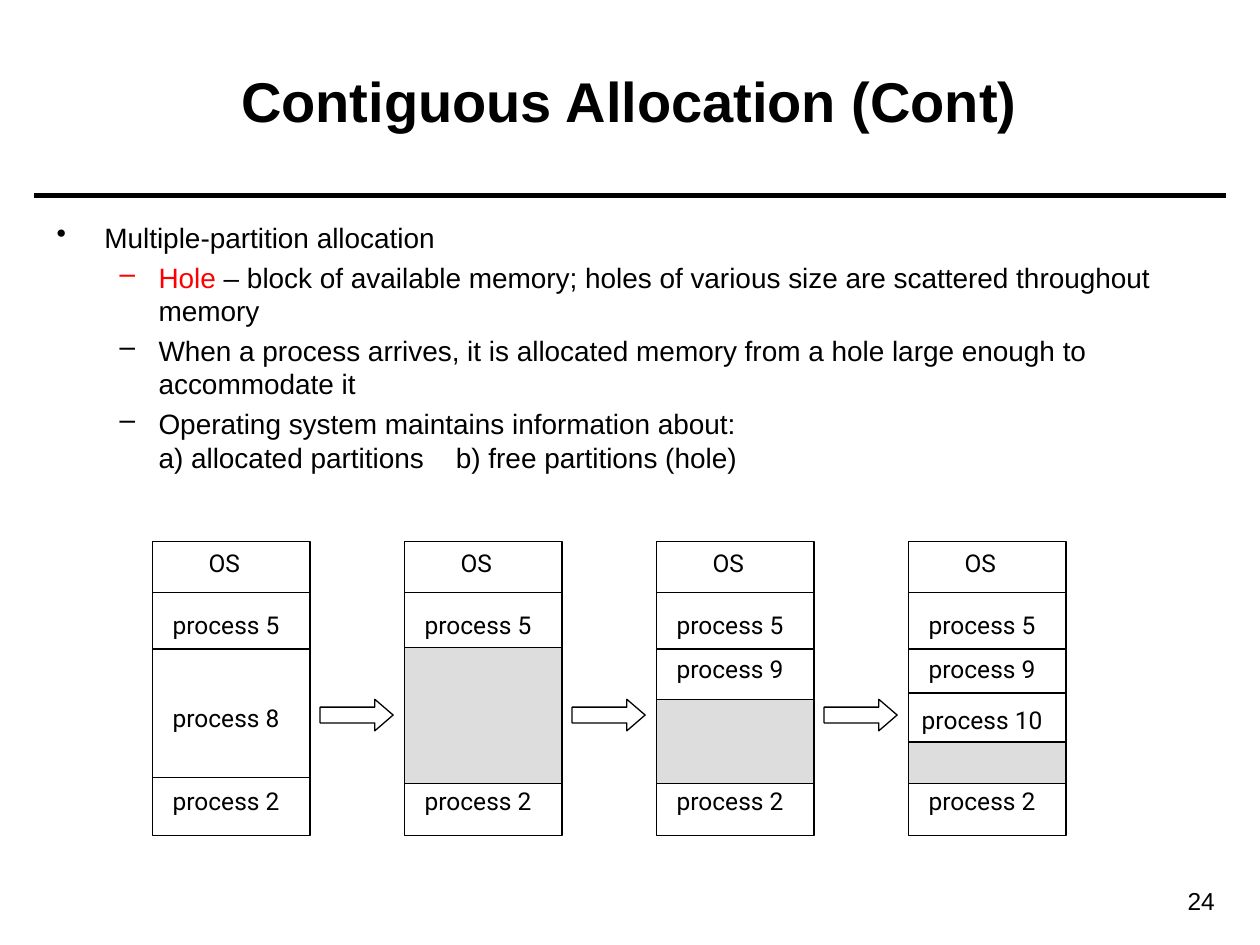
import pptx
import pptx.dml.color
import pptx.enum.shapes
import pptx.enum.text
import pptx.oxml.ns
import pptx.util
from lxml import etree

BLACK = pptx.dml.color.RGBColor(0x00, 0x00, 0x00)
WHITE = pptx.dml.color.RGBColor(0xFF, 0xFF, 0xFF)
RED = pptx.dml.color.RGBColor(0xFF, 0x00, 0x00)
GREY = pptx.dml.color.RGBColor(0xDD, 0xDD, 0xDD)

SHAPE = pptx.enum.shapes.MSO_SHAPE
ALIGN = pptx.enum.text.PP_ALIGN
ANCHOR = pptx.enum.text.MSO_ANCHOR

# All boxes are (left, top, width, height) in cells of a 200 x 150 grid.
COLUMNS, ROWS = 200, 150
CELL = 0.05

STATE_PITCH = 40
FIRST_STATE = (24.2, 86, 25, 46.6)
LABEL_HEIGHT = 6.6

# Rows below the top of a memory map.
COMMON_LABELS = [("process 5", 9.8), ("process 2", 37.8)]
STATES = [
    {"dividers": [8, 17, 37.4], "labels": [("process 8", 24.6)]},
    {"dividers": [8, 17], "labels": [], "hole": (16.8, 21.6)},
    {"dividers": [8, 17], "labels": [("process 9", 16.8)], "hole": (25, 13.4)},
    {"dividers": [8, 17, 24], "hole": (31.8, 6.6),
     "labels": [("process 9", 16.8), ("process 10", 25)]},
]


def cells(*counts):
    return [pptx.util.Inches(n * CELL) for n in counts]


def add_text(slide, box, text, size, font="Arial", align=ALIGN.CENTER,
             anchor=ANCHOR.MIDDLE, bold=False, wrap=True):
    tf = slide.shapes.add_textbox(*cells(*box)).text_frame
    tf.word_wrap = wrap
    tf.vertical_anchor = anchor
    p = tf.paragraphs[0]
    p.text = text
    p.alignment = align
    set_font(p.font, size, font, bold)


def set_font(font, size, name, bold=False):
    font.size = pptx.util.Pt(size)
    font.name = name
    font.bold = bold
    font.color.rgb = BLACK


def add_rule(slide, left, right, y, width):
    """Horizontal line."""
    line = slide.shapes.add_connector(
        pptx.enum.shapes.MSO_CONNECTOR.STRAIGHT, *cells(left, y, right, y))
    line.line.color.rgb = BLACK
    line.line.width = pptx.util.Pt(width)
    etree.SubElement(line._element.spPr, pptx.oxml.ns.qn("a:effectLst"))


def add_block(slide, kind, box, fill):
    sp = slide.shapes.add_shape(kind, *cells(*box))
    sp.shadow.inherit = False
    sp.fill.solid()
    sp.fill.fore_color.rgb = fill
    sp.line.color.rgb = BLACK
    sp.line.width = pptx.util.Pt(0.75)
    return sp


def set_bullet(p, char, indent, hanging, tabs=()):
    pPr = p._p.get_or_add_pPr()
    pPr.set("marL", str(pptx.util.Inches(indent)))
    pPr.set("indent", str(-pptx.util.Inches(hanging)))
    bullet = etree.Element(pptx.oxml.ns.qn("a:buChar"), char=char)
    tab_list = etree.Element(pptx.oxml.ns.qn("a:tabLst"))
    for tab in tabs:
        etree.SubElement(tab_list, pptx.oxml.ns.qn("a:tab"),
                         pos=str(pptx.util.Inches(tab)), algn="l")
    # Bullet and tabs come before the default run properties.
    pPr.find(pptx.oxml.ns.qn("a:defRPr")).addprevious(bullet)
    if tabs:
        bullet.addnext(tab_list)


def add_header(slide, box):
    add_text(slide, box, "Contiguous Allocation (Cont)", 32, bold=True)
    add_rule(slide, 5.4, COLUMNS - 5.4, 31, 3)


def add_outline(slide, box):
    """Bulleted list; each item is a level and its (text, colour) runs."""
    items = [
        (0, [("Multiple-partition allocation", BLACK)]),
        (1, [("Hole", RED),
             (" – block of available memory; holes of various size are "
              "scattered throughout memory", BLACK)]),
        (1, [("When a process arrives, it is allocated memory from a hole "
              "large enough to accommodate it", BLACK)]),
        (1, [("Operating system maintains information about:", BLACK),
             None,
             ("a) allocated partitions\tb) free partitions (hole)", BLACK)]),
    ]
    tf = slide.shapes.add_textbox(*cells(*box)).text_frame
    tf.word_wrap = True
    for i, (level, runs) in enumerate(items):
        p = tf.add_paragraph() if i else tf.paragraphs[0]
        p.level = level
        p.space_before = pptx.util.Pt(3.5)
        set_font(p.font, 16, "Arial")
        for run in runs:
            if run is None:
                p.add_line_break()
                continue
            r = p.add_run()
            r.text, r.font.color.rgb = run
        if level:
            # The stops serve tabs measured from the indent or from the edge.
            set_bullet(p, "–", 0.81, 0.31, tabs=(2.36, 3.17))
        else:
            set_bullet(p, "•", 0.38, 0.38)


def add_memory_map(slide, box, dividers, labels, hole=None):
    left, top, width, _ = box
    add_block(slide, SHAPE.RECTANGLE, box, WHITE)
    for row in dividers:
        add_rule(slide, left, left + width, top + row, 0.75)
    if hole:
        row, height = hole
        add_block(slide, SHAPE.RECTANGLE, (left, top + row, width, height), GREY)
    add_text(slide, (left + 6.6, top, 9.6, LABEL_HEIGHT), "OS", 14, "Roboto",
             wrap=False)
    for text, row in COMMON_LABELS + labels:
        add_text(slide, (left, top + row, width - 1.6, LABEL_HEIGHT), text, 14,
                 "Roboto")


def add_allocation_sequence(slide, first_box):
    left, top, width, height = first_box
    for i, state in enumerate(STATES):
        x = left + i * STATE_PITCH
        add_memory_map(slide, (x, top, width, height), **state)
        if i < len(STATES) - 1:
            arrow = add_block(slide, SHAPE.RIGHT_ARROW,
                              (x + width + 1.6, top + 25, 11.6, 5), WHITE)
            arrow.adjustments[0] = 0.5
            arrow.adjustments[1] = 0.58


def main():
    prs = pptx.Presentation()
    prs.slide_width, prs.slide_height = cells(COLUMNS, ROWS)
    slide = prs.slides.add_slide(prs.slide_layouts[6])
    add_header(slide, (7, 3.4, 185.8, 25))
    add_outline(slide, (7, 34, 185.8, 53.6))
    add_allocation_sequence(slide, FIRST_STATE)
    add_text(slide, (174, 139.6, 20.8, 6.8), "24", 14, align=ALIGN.RIGHT,
             anchor=ANCHOR.TOP)
    prs.save("out.pptx")


if __name__ == "__main__":
    main()
